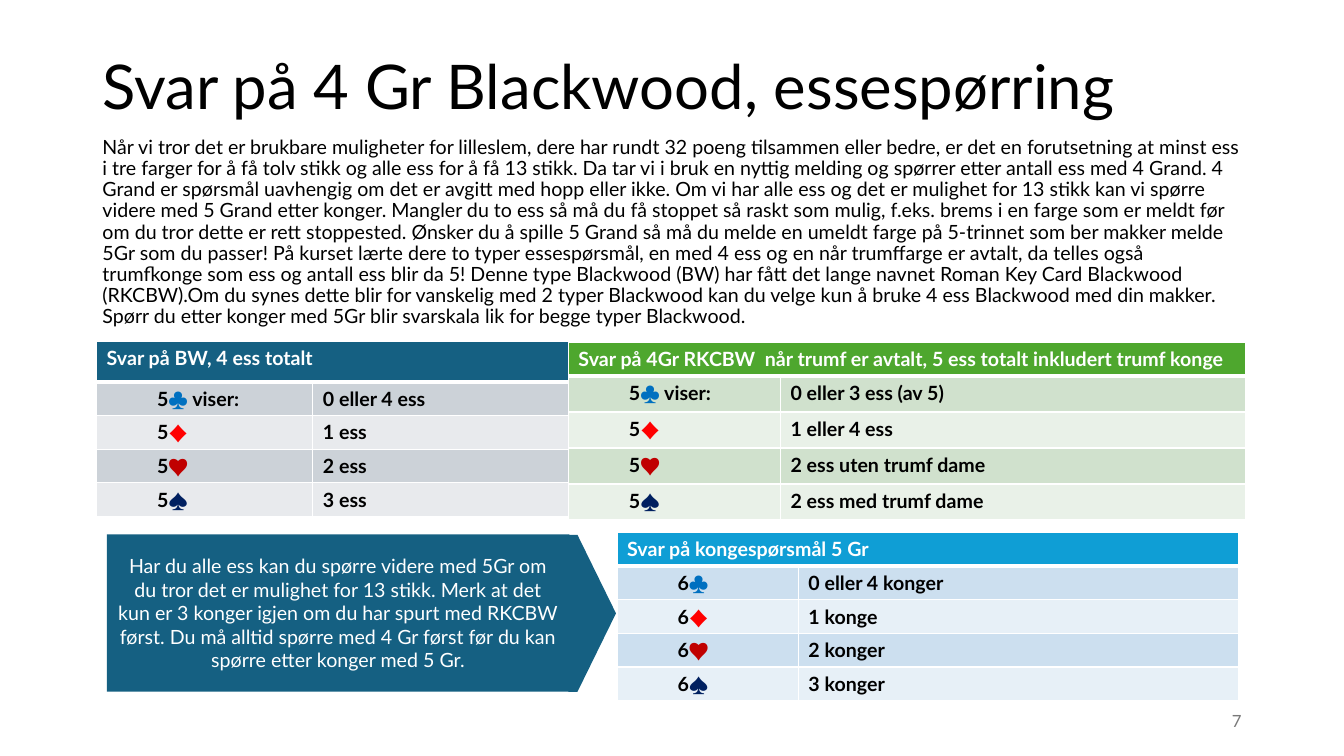
"""Build the slide on answers to the Blackwood ace-asking bid."""
from lxml.etree import SubElement
from pptx import Presentation
from pptx.dml.color import RGBColor
from pptx.enum.shapes import MSO_SHAPE
from pptx.enum.text import MSO_ANCHOR, MSO_AUTO_SIZE, PP_ALIGN
from pptx.oxml.ns import qn
from pptx.util import Pt

FONT = "Lato"
BLACK, WHITE, GREY, TEAL = "000000", "FFFFFF", "797979", "156082"
SUITS = [("♣", "0070C0", False), ("♦", "FF0000", False),
         ("♥", "C00000", False), ("♠", "002060", True)]

TITLE = "Svar på 4 Gr Blackwood, essespørring"
INTRO = [
    "Når vi tror det er brukbare muligheter for lilleslem, dere har rundt 32 poeng "
    "tilsammen eller bedre, er det en forutsetning at minst ess i tre farger for å få "
    "tolv stikk og alle ess for å få 13 stikk.",
    "Da tar vi i bruk en nyttig melding og spørrer etter antall ess med 4 Grand.",
    "4 Grand er spørsmål uavhengig om det er avgitt med hopp eller ikke.",
    "Om vi har alle ess og det er mulighet for 13 stikk kan vi spørre videre med "
    "5 Grand etter konger.",
    "Mangler du to ess så må du få stoppet så raskt som mulig, f.eks. brems i en farge "
    "som er meldt før om du tror dette er rett stoppested.",
    "Ønsker du å spille 5 Grand så må du melde en umeldt farge på 5-trinnet som ber "
    "makker melde 5Gr som du passer!",
    "På kurset lærte dere to typer essespørsmål, en med 4 ess og en når trumffarge er "
    "avtalt, da telles også trumfkonge som ess og antall ess blir da 5!",
    "Denne type Blackwood (BW) har fått det lange navnet Roman Key Card Blackwood "
    "(RKCBW).Om du synes dette blir for vanskelig med 2 typer Blackwood kan du velge kun "
    "å bruke 4 ess Blackwood med din makker.",
    "Spørr du etter konger med 5Gr blir svarskala lik for begge typer Blackwood.",
]
KINGS_NOTE = (
    "Har du alle ess kan du spørre videre med 5Gr om du tror det er mulighet for 13 "
    "stikk. Merk at det kun er 3 konger igjen om du har spurt med RKCBW først. Du må "
    "alltid spørre med 4 Gr først før du kan spørre etter konger med 5 Gr."
)


def colour(value):
    """Turn a hex string into a colour."""
    return RGBColor.from_string(value)


def style_run(r, size, value, bold=False):
    """Give a run its font, size, colour and weight."""
    r.font.name = FONT
    r.font.size = Pt(size)
    r.font.bold = bold
    r.font.color.rgb = colour(value)


def set_text(tf, text, size, value, align=PP_ALIGN.LEFT, bold=False):
    """Fill a text frame with one formatted paragraph and return it."""
    tf.text = text
    tf.word_wrap = True
    p = tf.paragraphs[0]
    p.alignment = align
    style_run(p.runs[0], size, value, bold)
    return p


def fill_placeholder(sp, box, text, size):
    """Move a placeholder and set its text without a bullet."""
    sp.left, sp.top, sp.width, sp.height = map(Pt, box)
    p = set_text(sp.text_frame, text, size, BLACK)
    sp.text_frame.auto_size = MSO_AUTO_SIZE.NONE
    p.line_spacing = 0.9
    pPr = p._p.get_or_add_pPr()
    pPr.set("marL", "0")
    pPr.set("indent", "0")
    SubElement(pPr, qn("a:buNone"))
    return p


def add_block(slide, kind, box):
    """Add a plain teal shape."""
    sp = slide.shapes.add_shape(kind, *map(Pt, box))
    sp.shadow.inherit = False
    sp.fill.solid()
    sp.fill.fore_color.rgb = colour(TEAL)
    sp.line.fill.background()
    return sp


def format_cell(cell, fill, bottom=1):
    """Give a cell white borders and a solid fill."""
    tcPr = cell._tc.get_or_add_tcPr()
    for side, width in zip("LRTB", (1, 1, 1, bottom)):
        ln = SubElement(tcPr, qn(f"a:ln{side}"), w=str(Pt(width)))
        SubElement(SubElement(ln, qn("a:solidFill")), qn("a:srgbClr"), val=WHITE)
    cell.fill.solid()
    cell.fill.fore_color.rgb = colour(fill)


def set_bid(cell, level, suit, suffix):
    """Write an indented bid with its coloured suit symbol."""
    symbol, value, bold = suit
    p = cell.text_frame.paragraphs[0]
    p._p.get_or_add_pPr().set("marL", str(Pt(36)))
    parts = [(level, BLACK, True), (symbol, value, bold), (suffix, BLACK, True)]
    for text, run_colour, run_bold in parts:
        if text:
            r = p.add_run()
            r.text = text
            style_run(r, 14, run_colour, run_bold)


def add_answers(slide, left, top, widths, heights, header, fills, level, suffix, answers):
    """Add a table that lists the meaning of the bid in each suit."""
    header_height, row_height = heights
    header_fill, *bands = fills
    height = header_height + row_height * len(answers)
    table = slide.shapes.add_table(len(answers) + 1, 2, Pt(left), Pt(top),
                                   Pt(sum(widths)), Pt(height)).table
    table.horz_banding = False
    for column, width in zip(table.columns, widths):
        column.width = Pt(width)
    for i, row in enumerate(table.rows):
        row.height = Pt(row_height if i else header_height)
    table.cell(0, 0).merge(table.cell(0, 1))
    for cell in table.rows[0].cells:
        format_cell(cell, header_fill, bottom=3)
    set_text(table.cell(0, 0).text_frame, header, 14, WHITE, bold=True)
    for i, (suit, answer) in enumerate(zip(SUITS, answers)):
        bid, meaning = table.rows[i + 1].cells
        for cell in (bid, meaning):
            format_cell(cell, bands[i % 2])
        set_bid(bid, level, suit, "" if i else suffix)
        set_text(meaning.text_frame, answer, 14, BLACK, bold=True)


def main():
    """Build and save the slide."""
    prs = Presentation()
    prs.slide_width, prs.slide_height = Pt(960), Pt(540)
    slide = prs.slides.add_slide(prs.slide_layouts[1])
    title, body = slide.placeholders
    fill_placeholder(title, (66, 28.75, 828, 70), TITLE, 44)
    p = fill_placeholder(body, (66, 94.5, 828, 392), " ".join(INTRO), 14)
    p.space_before = Pt(10)

    number = slide.shapes.add_textbox(Pt(678), Pt(500.5), Pt(216), Pt(28.75))
    number.text_frame.vertical_anchor = MSO_ANCHOR.MIDDLE
    set_text(number.text_frame, "7", 12, GREY, PP_ALIGN.RIGHT)

    add_answers(slide, 69, 244, (154.5, 186.5), (28.8, 24),
                "Svar på BW, 4 ess totalt", (TEAL, "CCD2D8", "E8EAED"),
                "5", " viser:", ["0 eller 4 ess", "1 ess", "2 ess", "3 ess"])
    add_answers(slide, 406, 244.5, (151.5, 332), (24, 25.75),
                "Svar på 4Gr RKCBW  når trumf er avtalt, 5 ess totalt inkludert trumf konge",
                ("4EA72E", "D0E1CD", "E9F1E8"), "5", " viser:",
                ["0 eller 3 ess (av 5)", "1 eller 4 ess",
                 "2 ess uten trumf dame", "2 ess med trumf dame"])

    note = add_block(slide, MSO_SHAPE.RECTANGLE, (76.25, 381.75, 330.5, 112.25))
    note.text_frame.vertical_anchor = MSO_ANCHOR.MIDDLE
    set_text(note.text_frame, KINGS_NOTE, 14, WHITE, PP_ALIGN.CENTER)

    add_answers(slide, 440.75, 380.25, (129.5, 314.5), (24, 24),
                "Svar på kongespørsmål 5 Gr", ("0F9ED5", "CCDFEF", "E7F0F7"),
                "6", "", ["0 eller 4 konger", "1 konge", "2 konger", "3 konger"])

    arrow = add_block(slide, MSO_SHAPE.PENTAGON, (406, 382, 34, 112.25))
    arrow.adjustments[0] = 0.81
    prs.save("out.pptx")


if __name__ == "__main__":
    main()
